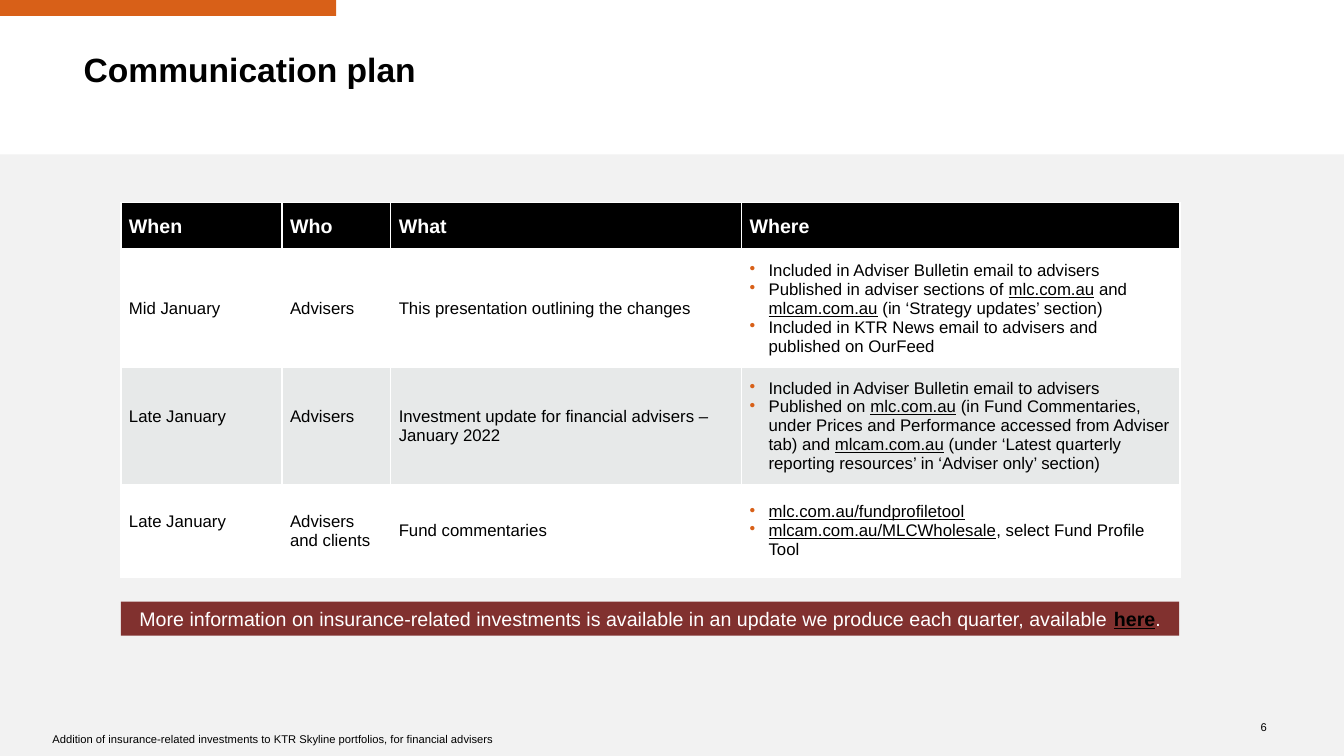
from pptx import Presentation
from pptx.dml.color import RGBColor
from pptx.enum.shapes import MSO_SHAPE
from pptx.enum.text import MSO_ANCHOR, PP_ALIGN
from pptx.oxml import parse_xml
from pptx.oxml.ns import nsdecls
from pptx.util import Cm, Pt

BLACK, WHITE, ORANGE = "000000", "FFFFFF", "D86018"
PALE, STRIPE, MAROON = "F2F2F2", "E7E9E9", "81312F"

HEADERS = ["When", "Who", "What", "Where"]
PLAN = [
    ["Mid January", "Advisers", "This presentation outlining the changes", [
        "Included in Adviser Bulletin email to advisers",
        "Published in adviser sections of _mlc.com.au_ and _mlcam.com.au_ (in ‘Strategy updates’ section)",
        "Included in KTR News email to advisers and published on OurFeed",
    ]],
    ["Late January", "Advisers", "Investment update for financial advisers – January 2022", [
        "Included in Adviser Bulletin email to advisers",
        "Published on _mlc.com.au_ (in Fund Commentaries, under Prices and Performance accessed "
        "from Adviser tab) and _mlcam.com.au_ (under ‘Latest quarterly reporting resources’ "
        "in ‘Adviser only’ section)",
    ]],
    ["Late January", "Advisers and clients", "Fund commentaries", [
        "_mlc.com.au/fundprofiletool_",
        "_mlcam.com.au/MLCWholesale_, select Fund Profile Tool",
    ]],
]
COLUMN_WIDTHS = [4.06, 2.74, 8.84, 11.05]
ROW_HEIGHTS = [1.18, 2.97, 2.78, 2.35]
RAISED_CELLS = {(2, 0), (2, 1), (3, 0)}


def rgb(value):
    return RGBColor.from_string(value)


def write(tf, text, size=12, color=BLACK, bold=False, align=PP_ALIGN.LEFT,
          spacing=None, bullet=None, marked_color=None, marked_bold=False):
    tf.word_wrap = True
    lines = [text] if isinstance(text, str) else text
    for i, line in enumerate(lines):
        p = tf.add_paragraph() if i else tf.paragraphs[0]
        p.alignment = align
        if spacing:
            p.line_spacing = spacing
        if bullet:
            pPr = p._p.get_or_add_pPr()
            pPr.set("marL", str(Cm(0.48)))
            pPr.set("indent", str(-Cm(0.48)))
            pPr.append(parse_xml(
                f'<a:buClr {nsdecls("a")}><a:srgbClr val="{bullet}"/></a:buClr>'))
            pPr.append(parse_xml(f'<a:buChar {nsdecls("a")} char="•"/>'))
        for j, part in enumerate(line.split("_")):
            if not part:
                continue
            marked = j % 2 == 1
            r = p.add_run()
            r.text = part
            r.font.name = "Arial"
            r.font.size = Pt(size)
            r.font.bold = marked_bold if marked else bold
            r.font.underline = marked
            r.font.color.rgb = rgb(marked_color if marked and marked_color else color)


def set_borders(cell, top, bottom):
    tcPr = cell._tc.get_or_add_tcPr()
    sides = [("L", 1), ("R", 1), ("T", top), ("B", bottom)]
    for i, (side, width) in enumerate(sides):
        tcPr.insert(i, parse_xml(
            f'<a:ln{side} {nsdecls("a")} w="{Pt(width)}"><a:solidFill>'
            f'<a:srgbClr val="{WHITE}"/></a:solidFill></a:ln{side}>'))


class PlanSlide:
    def __init__(self, prs):
        self.s = prs.slides.add_slide(prs.slide_layouts[6])
        self.padding = 0.2

    def rect(self, x, y, w, h, fill):
        sp = self.s.shapes.add_shape(MSO_SHAPE.RECTANGLE, Cm(x), Cm(y), Cm(w), Cm(h))
        sp.shadow.inherit = False
        sp.fill.solid()
        sp.fill.fore_color.rgb = rgb(fill)
        sp.line.fill.background()
        return sp

    def text(self, x, y, w, h, text, inset=True, anchor=MSO_ANCHOR.TOP, **fmt):
        tf = self.s.shapes.add_textbox(Cm(x), Cm(y), Cm(w), Cm(h)).text_frame
        tf.vertical_anchor = anchor
        if not inset:
            tf.margin_left = tf.margin_right = tf.margin_top = tf.margin_bottom = 0
        write(tf, text, **fmt)

    def cell(self, cell, text, fill, top=1, bottom=1, raised=False, **fmt):
        cell.fill.solid()
        cell.fill.fore_color.rgb = rgb(fill)
        cell.vertical_anchor = MSO_ANCHOR.MIDDLE
        cell.margin_left = cell.margin_right = cell.margin_top = Cm(self.padding)
        cell.margin_bottom = Cm(self.padding + 0.48 * raised)
        set_borders(cell, top, bottom)
        write(cell.text_frame, text, **fmt)

    def table(self, x, y, headers, rows, widths, heights):
        table = self.s.shapes.add_table(len(heights), len(widths), Cm(x), Cm(y),
                                        Cm(sum(widths)), Cm(sum(heights))).table
        for column, width in zip(table.columns, widths):
            column.width = Cm(width)
        for row, height in zip(table.rows, heights):
            row.height = Cm(height)
        for c, header in enumerate(headers):
            self.cell(table.cell(0, c), header, BLACK, bottom=3,
                      size=14, color=WHITE, bold=True)
        for r, row in enumerate(rows, 1):
            for c, content in enumerate(row):
                self.cell(table.cell(r, c), content, WHITE if r % 2 else STRIPE,
                          top=3 if r == 1 else 1, raised=(r, c) in RAISED_CELLS,
                          bullet=ORANGE if isinstance(content, list) else None)


def main():
    prs = Presentation()
    prs.slide_width, prs.slide_height = Cm(33.87), Cm(19.05)
    s = PlanSlide(prs)
    s.rect(0, 0, 8.47, 0.4, ORANGE)
    s.rect(0, 3.89, 33.87, 15.16, PALE)
    s.text(31.22, 18.06, 0.71, 0.53, "6", inset=False, anchor=MSO_ANCHOR.MIDDLE,
           size=8, align=PP_ALIGN.RIGHT)
    s.text(2.11, 1.35, 27, 1.45, "Communication plan", inset=False,
           size=24, bold=True, spacing=0.9)
    s.table(3.05, 5.11, HEADERS, PLAN, COLUMN_WIDTHS, ROW_HEIGHTS)
    s.text(1.07, 18.34, 12.7, 0.53,
           "Addition of insurance-related investments to KTR Skyline portfolios, "
           "for financial advisers", size=8)
    banner = s.rect(3.05, 15.16, 26.67, 0.86, MAROON)
    write(banner.text_frame,
          "More information on insurance-related investments is available in an update "
          "we produce each quarter, available _here_.",
          size=14, color=WHITE, align=PP_ALIGN.CENTER, marked_color=BLACK, marked_bold=True)
    prs.save("out.pptx")


if __name__ == "__main__":
    main()
